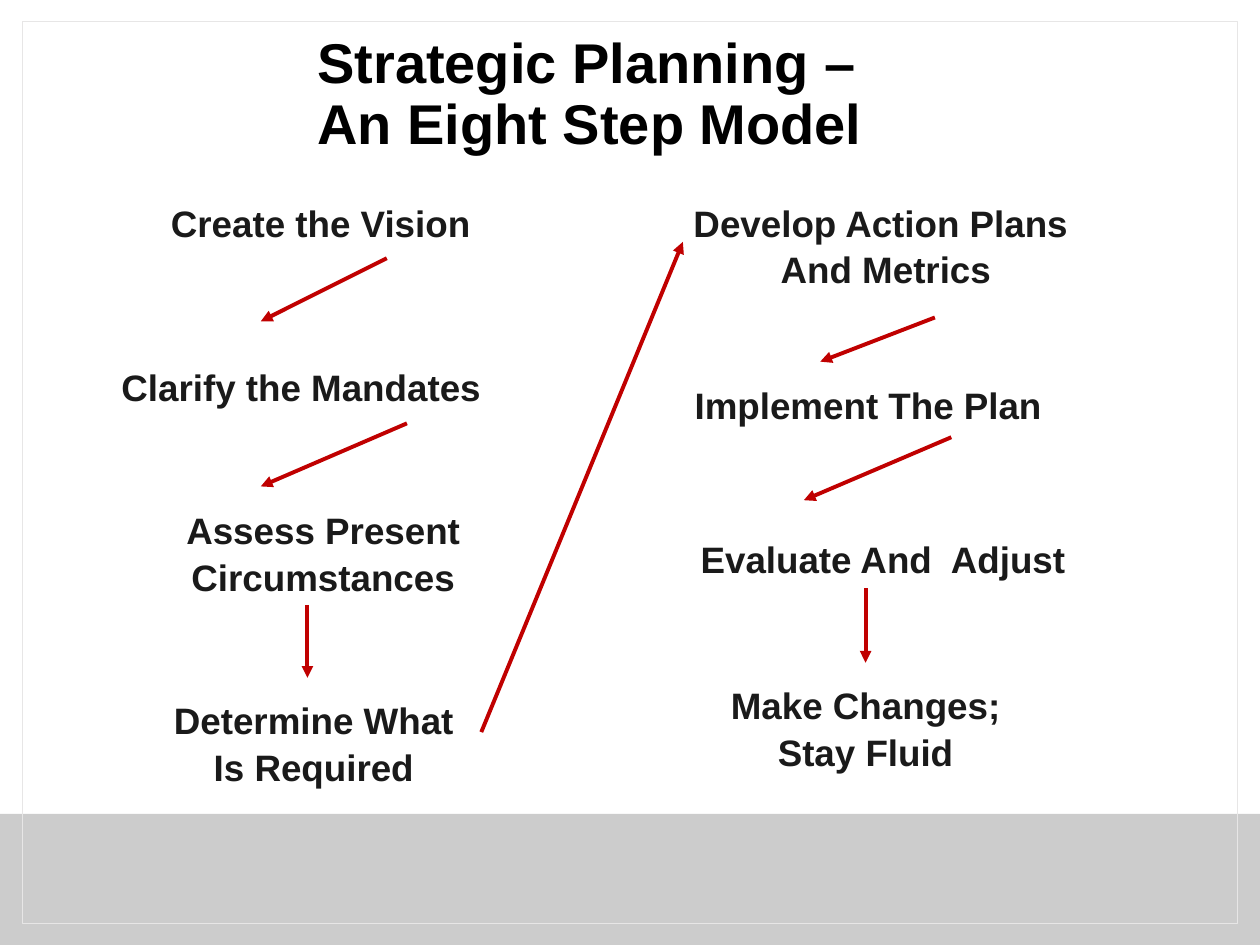
from typing import NamedTuple

from lxml.etree import SubElement
from pptx import Presentation
from pptx.dml.color import RGBColor
from pptx.enum.shapes import MSO_CONNECTOR as Connector, MSO_SHAPE as Shape
from pptx.enum.text import MSO_AUTO_SIZE as AutoSize, MSO_ANCHOR as Anchor, PP_ALIGN as Align
from pptx.oxml.ns import qn
from pptx.util import Inches, Pt

COLOURS = {"title": "000000", "step": "1A1A1A", "arrow": "C00000",
           "band": "CCCCCC", "frame": "E7E6E6"}
FONT = "Arial"


class Area(NamedTuple):
    """Left, top, width and height in percent of the slide."""
    left: float
    top: float
    width: float
    height: float


class Step(NamedTuple):
    text: str
    area: Area
    align: Align = Align.CENTER
    indent: float = 0


class Arrow(NamedTuple):
    """Start and end points in percent of the slide."""
    start: tuple[float, float]
    end: tuple[float, float]


TITLE = "Strategic Planning –\vAn Eight Step Model"
TITLE_AREA = Area(24.2, 2.4, 75.8, 8.67)
BAND_AREA = Area(0, 86.13, 100, 13.87)
FRAME_AREA = Area(1.8, 2.27, 96.4, 95.47)

STEPS = [
    # Left column
    Step("Create the Vision", Area(12.6, 20.93, 25.7, 9.87)),
    Step("Clarify the Mandates", Area(9.2, 38.27, 29.4, 9.6)),
    Step("Assess Present\nCircumstances", Area(14.3, 53.47, 22.7, 14.93)),
    Step("Determine What\nIs Required", Area(13.5, 73.6, 22.8, 14.93)),
    # Right column
    Step("Develop Action Plans \nAnd Metrics", Area(50.7, 20.93, 39.2, 14.93)),
    Step("Implement The Plan", Area(53.8, 40.27, 30.2, 4.67)),
    Step("Evaluate And  Adjust", Area(53.2, 56.53, 42.1, 9.6), Align.LEFT, 2.4),
    Step("Make Changes;\nStay Fluid", Area(57.9, 72, 21.6, 14.93)),
]

ARROWS = [
    # Left column
    Arrow((30.7, 27.33), (20.7, 34)),
    Arrow((32.3, 44.8), (20.7, 51.47)),
    Arrow((24.4, 64), (24.4, 71.73)),
    # From the left column to the right one
    Arrow((38.2, 77.47), (54.2, 25.6)),
    # Right column
    Arrow((74.2, 33.6), (65.1, 38.27)),
    Arrow((75.5, 46.27), (63.8, 52.93)),
    Arrow((68.7, 62.27), (68.7, 70.13)),
]

deck = Presentation()
deck.slide_width, deck.slide_height = Inches(10), Inches(7.5)
page = deck.slides.add_slide(deck.slide_layouts[6])


def across(share: float) -> int:
    return round(deck.slide_width * share / 100)


def down(share: float) -> int:
    return round(deck.slide_height * share / 100)


def place(area: Area) -> tuple[int, int, int, int]:
    return across(area.left), down(area.top), across(area.width), down(area.height)


def colour(name: str) -> RGBColor:
    return RGBColor.from_string(COLOURS[name])


def add_rectangle(area: Area):
    rectangle = page.shapes.add_shape(Shape.RECTANGLE, *place(area))
    rectangle.shadow.inherit = False
    return rectangle


def add_text(text: str, area: Area, size: float, colour_name: str, spacing: float):
    frame = page.shapes.add_textbox(*place(area)).text_frame
    frame.word_wrap = True
    frame.vertical_anchor = Anchor.TOP
    frame.text = text
    for para in frame.paragraphs:
        para.line_spacing = spacing
        for span in para.runs:
            span.font.name, span.font.size, span.font.bold = FONT, Pt(size), True
            span.font.color.rgb = colour(colour_name)
    return frame


def add_step(step: Step) -> None:
    frame = add_text(step.text, step.area, 21, "step", 1.06)
    frame.auto_size = AutoSize.SHAPE_TO_FIT_TEXT
    frame.margin_left = across(step.indent)
    frame.margin_top = frame.margin_right = frame.margin_bottom = 0
    for para in frame.paragraphs:
        para.alignment = step.align


def add_arrow(arrow: Arrow) -> None:
    (x1, y1), (x2, y2) = arrow
    connector = page.shapes.add_connector(
        Connector.STRAIGHT, across(x1), down(y1), across(x2), down(y2))
    connector.line.color.rgb = colour("arrow")
    connector.line.width = Pt(2.25)
    SubElement(connector.line._get_or_add_ln(), qn("a:tailEnd"), type="triangle")
    SubElement(connector._element.spPr, qn("a:effectLst"))


# Footer band and thin frame
band = add_rectangle(BAND_AREA)
band.fill.solid()
band.fill.fore_color.rgb = colour("band")
band.line.fill.background()

border = add_rectangle(FRAME_AREA)
border.fill.background()
border.line.color.rgb = colour("frame")
border.line.width = Pt(0.5)

# Title
title = add_text(TITLE, TITLE_AREA, 32, "title", 0.9)
title.margin_top = Inches(0.1)

# Eight steps and the arrows between them
for step in STEPS:
    add_step(step)
for arrow in ARROWS:
    add_arrow(arrow)

deck.save("out.pptx")
